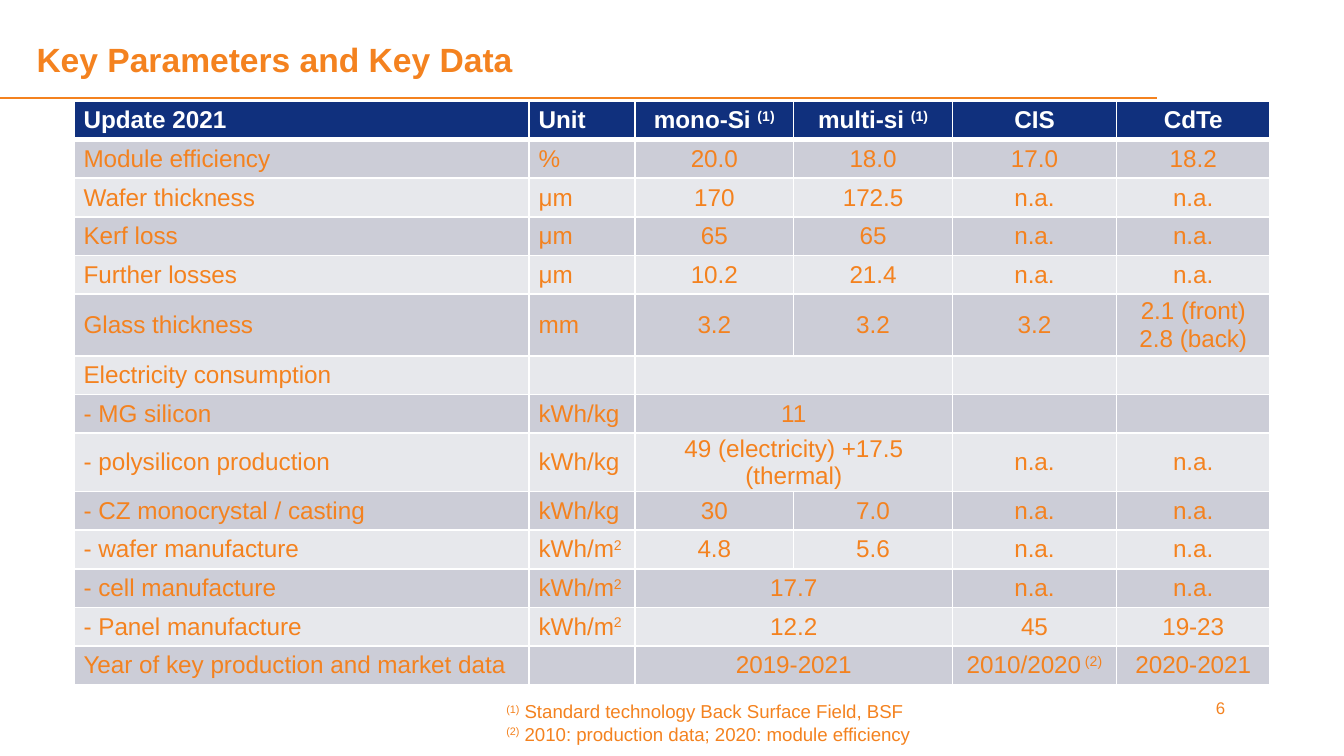
from lxml import etree
from pptx import Presentation
from pptx.dml.color import RGBColor
from pptx.enum.shapes import MSO_CONNECTOR
from pptx.enum.text import MSO_ANCHOR, MSO_AUTO_SIZE, PP_ALIGN
from pptx.oxml.ns import qn
from pptx.util import Cm, Pt

ORANGE = RGBColor(0xF4, 0x82, 0x1F)
NAVY = RGBColor(0x10, 0x30, 0x7D)
WHITE = RGBColor(0xFF, 0xFF, 0xFF)
BAND_DARK = RGBColor(0xCC, 0xCD, 0xD7)
BAND_LIGHT = RGBColor(0xE7, 0xE8, 0xEC)
LEFT, CENTER = PP_ALIGN.LEFT, PP_ALIGN.CENTER
MIDDLE = MSO_ANCHOR.MIDDLE
NO_AUTOFIT = MSO_AUTO_SIZE.NONE
STRAIGHT = MSO_CONNECTOR.STRAIGHT

TITLE_ONLY = 5
COLUMN_WIDTHS = [8.6, 2, 3, 3, 3.1, 2.9]
ROW_HEIGHT, GLASS_ROW_HEIGHT = 0.73, 1.17
GLASS_ROW = 5

# Text between a pair of bars is superscript; None continues the cell to its left.
ROWS = [
    ["Update 2021", "Unit", "mono-Si |(1)|", "multi-si |(1)|", "CIS", "CdTe"],
    ["Module efficiency", "%", "20.0", "18.0", "17.0", "18.2"],
    ["Wafer thickness", "μm", "170", "172.5", "n.a.", "n.a."],
    ["Kerf loss", "μm", "65", "65", "n.a.", "n.a."],
    ["Further losses", "μm", "10.2", "21.4", "n.a.", "n.a."],
    ["Glass thickness", "mm", "3.2", "3.2", "3.2", "2.1 (front)\n2.8 (back)"],
    ["Electricity consumption", "", "", None, "", ""],
    ["- MG silicon", "kWh/kg", "11", None, "", ""],
    ["- polysilicon production", "kWh/kg", "49 (electricity) +17.5 (thermal)", None,
     "n.a.", "n.a."],
    ["- CZ monocrystal / casting", "kWh/kg", "30", "7.0", "n.a.", "n.a."],
    ["- wafer manufacture", "kWh/m|2|", "4.8", "5.6", "n.a.", "n.a."],
    ["- cell manufacture", "kWh/m|2|", "17.7", None, "n.a.", "n.a."],
    ["- Panel manufacture", "kWh/m|2|", "12.2", None, "45", "19-23"],
    ["Year of key production and market data", "", "2019-2021", None,
     "2010/2020| (2)|", "2020-2021"],
]
FOOTNOTES = [
    "|(1)| Standard technology Back Surface Field, BSF",
    "|(2)| 2010: production data; 2020: module efficiency",
]


def write(paragraph, text, size, color=ORANGE, bold=False, align=LEFT):
    """Fill a paragraph, raising the text between bars."""
    paragraph.alignment = align
    paragraph.font.name = "Arial"
    paragraph.font.size = Pt(size)
    paragraph.font.bold = bold
    paragraph.font.color.rgb = color
    for index, part in enumerate(text.split("|")):
        for line_number, line in enumerate(part.split("\n")):
            if line_number:
                paragraph.add_line_break()
            if line:
                run = paragraph.add_run()
                run.text = line
                if index % 2:
                    run._r.get_or_add_rPr().set("baseline", "30000")


def add_text(slide, box, lines, size):
    frame = slide.shapes.add_textbox(*map(Cm, box)).text_frame
    frame.word_wrap = True
    for index, line in enumerate(lines):
        paragraph = frame.add_paragraph() if index else frame.paragraphs[0]
        write(paragraph, line, size)


def add_title(slide, box, text):
    title = slide.shapes.title
    title.left, title.top, title.width, title.height = map(Cm, box)
    frame = title.text_frame
    frame.auto_size = NO_AUTOFIT
    frame.vertical_anchor = MIDDLE
    frame.margin_left = 0
    frame.margin_bottom = Cm(0.33)
    write(frame.paragraphs[0], text, 18, bold=True)


def add_rule(slide, left, right, y):
    rule = slide.shapes.add_connector(STRAIGHT, Cm(left), Cm(y), Cm(right), Cm(y))
    rule.line.color.rgb = ORANGE
    rule.line.width = Pt(0.75)
    etree.SubElement(rule._element.spPr, qn("a:effectLst"))


def set_borders(cell, bottom_width):
    properties = cell._tc.get_or_add_tcPr()
    for side, width in (("L", 1), ("R", 1), ("T", 1), ("B", bottom_width)):
        line = etree.SubElement(properties, qn(f"a:ln{side}"), w=str(Pt(width)))
        fill = etree.SubElement(line, qn("a:solidFill"))
        etree.SubElement(fill, qn("a:srgbClr"), val=str(WHITE))


def format_cell(cell, text, is_header, fill, align):
    set_borders(cell, 3 if is_header else 1)
    cell.fill.solid()
    cell.fill.fore_color.rgb = fill
    cell.vertical_anchor = MIDDLE
    cell.margin_left = cell.margin_right = Cm(0.18)
    cell.margin_top = cell.margin_bottom = 0
    paragraph = cell.text_frame.paragraphs[0]
    if text:
        paragraph.space_after = Pt(6)
    write(paragraph, text or "", 13, WHITE if is_header else ORANGE, is_header, align)


def add_parameter_table(slide, left, top):
    heights = [ROW_HEIGHT] * len(ROWS)
    heights[GLASS_ROW] = GLASS_ROW_HEIGHT
    table = slide.shapes.add_table(
        len(ROWS), len(COLUMN_WIDTHS), Cm(left), Cm(top),
        Cm(sum(COLUMN_WIDTHS)), Cm(sum(heights))).table
    for column, width in zip(table.columns, COLUMN_WIDTHS):
        column.width = Cm(width)
    for row, height in zip(table.rows, heights):
        row.height = Cm(height)

    for row_index, texts in enumerate(ROWS):
        is_header = row_index == 0
        fill = NAVY if is_header else BAND_DARK if row_index % 2 else BAND_LIGHT
        for column_index, text in enumerate(texts):
            cell = table.cell(row_index, column_index)
            if text is None:
                table.cell(row_index, column_index - 1).merge(cell)
            format_cell(cell, text, is_header, fill, LEFT if column_index < 2 else CENTER)


def build_slide(presentation):
    slide = presentation.slides.add_slide(presentation.slide_layouts[TITLE_ONLY])
    # Frame: rule and slide number
    add_rule(slide, 0, 21.87, 1.85)
    add_text(slide, (22.73, 13.06, 1.8, 0.64), ["6"], 9)
    # Content
    add_title(slide, (0.69, 0.61, 20.24, 1.22), "Key Parameters and Key Data")
    add_parameter_table(slide, 1.4, 1.91)
    add_text(slide, (9.32, 13.11, 8.2, 1.12), FOOTNOTES, 10)


def main():
    presentation = Presentation()
    presentation.slide_width = Cm(25.4)
    presentation.slide_height = Cm(14.29)
    build_slide(presentation)
    presentation.save("out.pptx")


if __name__ == "__main__":
    main()
